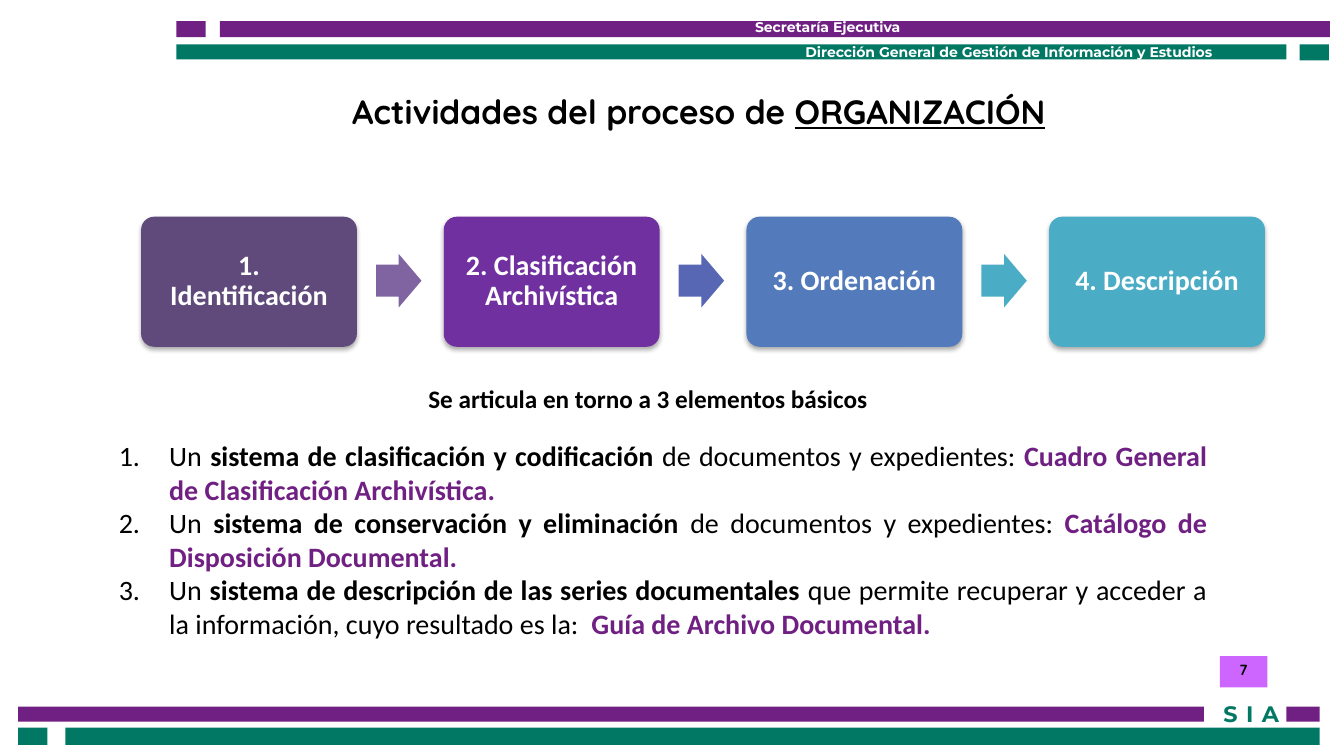
import pptx
import pptx.dml.color
import pptx.enum.shapes
import pptx.enum.text
import pptx.oxml.ns
import pptx.util
from lxml import etree

PURPLE, GREEN, BLACK, WHITE = "702082", "007864", "000000", "FFFFFF"
SHAPE = pptx.enum.shapes.MSO_SHAPE
ALIGN = pptx.enum.text.PP_ALIGN
ANCHOR = pptx.enum.text.MSO_ANCHOR


def rgb(color):
    return pptx.dml.color.RGBColor.from_string(color)


def add_xml(parent, tag, **attributes):
    return etree.SubElement(parent, pptx.oxml.ns.qn(tag), attributes)


class GridSlide:
    """Slide on a grid whose columns and rows are a tenth of an inch."""

    COLUMNS, ROWS, CELL = 133.3, 75, 0.1

    def __init__(self, presentation):
        presentation.slide_width = self.cells(self.COLUMNS)
        presentation.slide_height = self.cells(self.ROWS)
        self.slide = presentation.slides.add_slide(presentation.slide_layouts[5])

    def cells(self, count):
        return pptx.util.Inches(count * self.CELL)

    def box(self, *area):
        return [self.cells(count) for count in area]

    def style(self, run, size, color=BLACK, font="Calibri", bold=True, underline=None):
        run.font.size = pptx.util.Pt(size)
        run.font.name = font
        run.font.bold = bold
        run.font.underline = underline
        run.font.color.rgb = rgb(color)

    def fill_paragraph(self, paragraph, text, align=ALIGN.LEFT, **style):
        paragraph.text = text
        paragraph.alignment = align
        for run in paragraph.runs:
            self.style(run, **style)

    def title(self, area, plain, underlined):
        title = self.slide.shapes.title
        title.left, title.top, title.width, title.height = self.box(*area)
        frame = title.text_frame
        frame.auto_size = pptx.enum.text.MSO_AUTO_SIZE.NONE
        frame.vertical_anchor = ANCHOR.TOP
        paragraph = frame.paragraphs[0]
        self.fill_paragraph(paragraph, plain, ALIGN.CENTER, size=24, font="Quicksand")
        ending = paragraph.add_run()
        ending.text = underlined
        self.style(ending, 24, font="Quicksand", underline=True)

    def block(self, area, color, kind=SHAPE.RECTANGLE, adjustments=()):
        block = self.slide.shapes.add_shape(kind, *self.box(*area))
        block.shadow.inherit = False
        block.fill.solid()
        block.fill.fore_color.rgb = rgb(color)
        block.line.fill.background()
        for index, value in enumerate(adjustments):
            block.adjustments[index] = value
        return block

    def card(self, area, label, color):
        card = self.block(area, color, SHAPE.ROUNDED_RECTANGLE, [0.1])
        effects = card._element.spPr.find(pptx.oxml.ns.qn("a:effectLst"))
        shadow = add_xml(effects, "a:outerShdw", blurRad="44450", dist="27940",
                         dir="5400000", algn="ctr", rotWithShape="0")
        add_xml(add_xml(shadow, "a:srgbClr", val=BLACK), "a:alpha", val="32000")
        frame = card.text_frame
        frame.word_wrap = True
        frame.vertical_anchor = ANCHOR.MIDDLE
        frame.margin_left = frame.margin_right = self.cells(1.15)
        paragraph = frame.paragraphs[0]
        self.fill_paragraph(paragraph, label, ALIGN.CENTER, size=20, color=WHITE)
        paragraph.line_spacing = 0.9

    def text_frame(self, area, wrap=True):
        frame = self.slide.shapes.add_textbox(*self.box(*area)).text_frame
        frame.word_wrap = wrap
        return frame

    def numbered_list(self, area, items):
        """Each item is a plain opening, a bold subject, a plain link and a purple result."""
        frame = self.text_frame(area)
        for index, parts in enumerate(items):
            paragraph = frame.add_paragraph() if index else frame.paragraphs[0]
            paragraph.alignment = ALIGN.JUSTIFY
            properties = paragraph._p.get_or_add_pPr()
            indent = self.cells(5)
            properties.set("marL", str(indent))
            properties.set("indent", str(-indent))
            add_xml(properties, "a:buFont", typeface="+mj-lt")
            add_xml(properties, "a:buAutoNum", type="arabicPeriod")
            for part, bold, color in zip(parts, (False, True, False, True),
                                         (BLACK, BLACK, BLACK, PURPLE)):
                run = paragraph.add_run()
                run.text = part
                self.style(run, 20, color, bold=bold)


BANDS = [
    ((127.6, 70.1, 3.3, 1.5), PURPLE), ((1.8, 70.1, 117.6, 1.5), PURPLE),
    ((1.8, 72.2, 2.9, 1.7), GREEN), ((6.5, 72.2, 124.4, 1.7), GREEN),
    ((17.5, 2.1, 2.9, 1.6), PURPLE), ((21.8, 2.1, 110.1, 1.6), PURPLE),
    ((128.9, 4.4, 2.9, 1.6), GREEN), ((17.5, 4.4, 110.1, 1.5), GREEN),
]
STEPS = [
    ("1. Identificación", "604A7B", "8064A2"),
    ("2. Clasificación Archivística", "7030A0", "5767B4"),
    ("3. Ordenación", "537ABA", "4BACC6"),
    ("4. Descripción", "4BACC6", None),
]
STEP_LEFT, STEP_PITCH, ARROW_OFFSET = 14, 30.02, 23.3
ELEMENTS = [
    ("Un ", "sistema de clasificación y codificación ",
     "de documentos y expedientes: ", "Cuadro General de Clasificación Archivística."),
    ("Un ", "sistema de conservación y eliminación ",
     "de documentos y expedientes: ", "Catálogo de Disposición Documental."),
    ("Un ", "sistema de descripción de las series documentales ",
     "que permite recuperar y acceder a la información, cuyo resultado es la:  ",
     "Guía de Archivo Documental."),
]


def main():
    presentation = pptx.Presentation()
    page = GridSlide(presentation)

    for area, color in BANDS:
        page.block(area, color)

    acronym = page.text_frame((117.8, 69, 12.6, 3.7)).paragraphs[0]
    page.fill_paragraph(acronym, "SIA", ALIGN.CENTER, size=16, color=GREEN,
                        font="Montserrat")
    acronym.runs[0].font._element.set("spc", "600")

    header = page.text_frame((73.9, 1.3, 54.6, 5.2))
    header.text = ("Secretaría Ejecutiva\n"
                   "\tDirección General de Gestión de Información y Estudios")
    office, department = header.paragraphs
    for paragraph in (office, department):
        page.style(paragraph.runs[0], 10, WHITE, "Montserrat")
    department.space_before = pptx.util.Pt(6)

    page.title((26.4, 8.5, 85.8, 5.5), "Actividades del proceso de ", "ORGANIZACIÓN")

    for index, (label, color, arrow_color) in enumerate(STEPS):
        left = STEP_LEFT + index * STEP_PITCH
        page.card((left, 21.5, 21.4, 12.9), label, color)
        if arrow_color:
            page.block((left + ARROW_OFFSET, 25.2, 4.5, 5.3), arrow_color,
                       SHAPE.RIGHT_ARROW, [0.6, 0.5])

    page.numbered_list((10.8, 43, 109.9, 25.2), ELEMENTS)

    summary = page.text_frame((41.5, 37.5, 45.9, 4), wrap=False)
    page.fill_paragraph(summary.paragraphs[0],
                        "Se articula en torno a 3 elementos básicos", size=18)

    page_number = page.block((121, 65.1, 4.7, 3.1), "CC66FF").text_frame
    page_number.vertical_anchor = ANCHOR.TOP
    page.fill_paragraph(page_number.paragraphs[0], "7", ALIGN.CENTER, size=10.5,
                        font="Quicksand")

    presentation.save("out.pptx")


if __name__ == "__main__":
    main()
